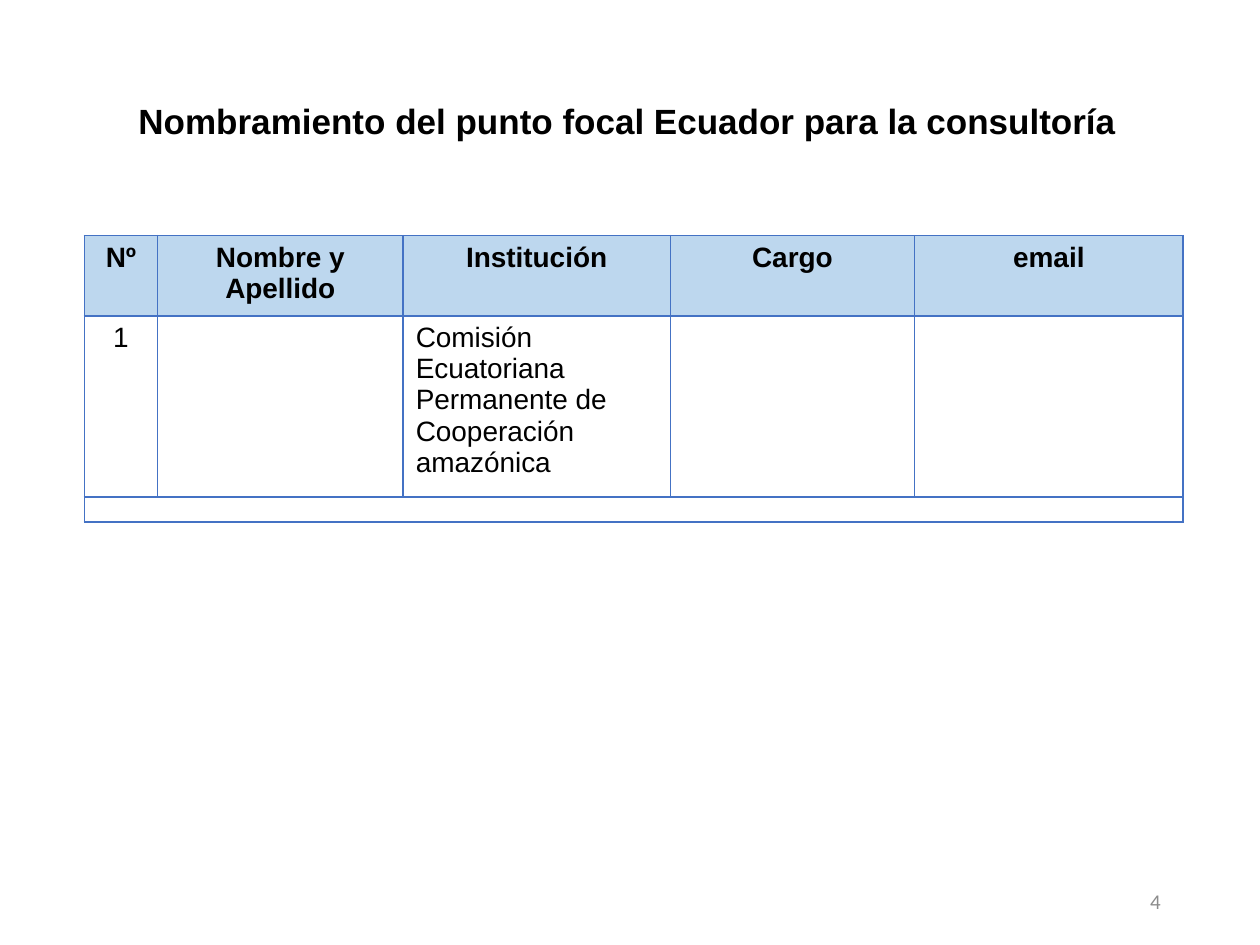
from lxml import etree
from pptx import Presentation
from pptx import util as u
from pptx.dml.color import RGBColor
from pptx.enum import text
from pptx.oxml.ns import qn

# Content
TITLE = "Nombramiento del punto focal Ecuador para la consultoría"
PAGE = "4"
HEAD = ["Nº", "Nombre y Apellido", "Institución", "Cargo", "email"]
BODY = ["1", "", "Comisión Ecuatoriana Permanente de\nCooperación amazónica", "", ""]
FOOT = [""] * len(HEAD)
COLS = [0.58, 1.95, 2.12, 1.94, 2.13]
ROWS = [0.64, 1.43, 0.2]
BLUE, PALE, BLACK, GRAY = "4472C4", "BDD7EE", "000000", "8C8C8C"
LEFT, MID, RIGHT = text.PP_ALIGN.LEFT, text.PP_ALIGN.CENTER, text.PP_ALIGN.RIGHT


def color(code):
    return RGBColor.from_string(code)


def write(frame, words, size, align, bold=False, font="Arial", ink=BLACK):
    for i, line in enumerate(words.split("\n")):
        para = frame.paragraphs[0] if i == 0 else frame.add_paragraph()
        para.alignment = align
        run = para.add_run()
        run.text = line
        run.font.size, run.font.bold, run.font.name = u.Pt(size), bold, font
        run.font.color.rgb = color(ink)


def label(box, words, size, align, anchor, **style):
    frame = slide.shapes.add_textbox(*map(u.Inches, box)).text_frame
    frame.word_wrap = True
    frame.vertical_anchor = anchor
    write(frame, words, size, align, **style)


def border(cell):
    props = cell._tc.get_or_add_tcPr()
    for i, side in enumerate(("a:lnL", "a:lnR", "a:lnT", "a:lnB")):
        line = etree.Element(qn(side), w=str(u.Pt(1)))
        fill = etree.SubElement(line, qn("a:solidFill"))
        etree.SubElement(fill, qn("a:srgbClr"), val=BLUE)
        props.insert(i, line)


deck = Presentation()
deck.slide_width, deck.slide_height = u.Inches(10), u.Inches(7.5)
slide = deck.slides.add_slide(deck.slide_layouts[6])

# Title and page number
label((0.67, 0.74, 8.62, 0.44), TITLE, 20, MID, text.MSO_ANCHOR.TOP, bold=True)
label((7.06, 6.95, 2.25, 0.4), PAGE, 12, RIGHT, text.MSO_ANCHOR.MIDDLE,
      font="Calibri", ink=GRAY)

# Table
grid = slide.shapes.add_table(
    len(ROWS), len(COLS), u.Inches(0.67), u.Inches(1.87),
    u.Inches(sum(COLS)), u.Inches(sum(ROWS))).table
for col, wide in zip(grid.columns, COLS):
    col.width = u.Inches(wide)
for row, high in zip(grid.rows, ROWS):
    row.height = u.Inches(high)

for r, line in enumerate([HEAD, BODY, FOOT]):
    for c, words in enumerate(line):
        cell = grid.cell(r, c)
        if r == 0:
            cell.fill.solid()
            cell.fill.fore_color.rgb = color(PALE)
        else:
            cell.fill.background()
        border(cell)
        if words:
            align = MID if r == 0 or c == 0 else LEFT
            write(cell.text_frame, words, 16, align, bold=r == 0)
        else:
            # A small end mark keeps empty cells from stretching the row
            para = cell.text_frame.paragraphs[0]
            etree.SubElement(para._p, qn("a:endParaRPr"), sz="600")
            cell.margin_top = cell.margin_bottom = 0
grid.cell(2, 0).merge(grid.cell(2, len(COLS) - 1))

deck.save("out.pptx")
